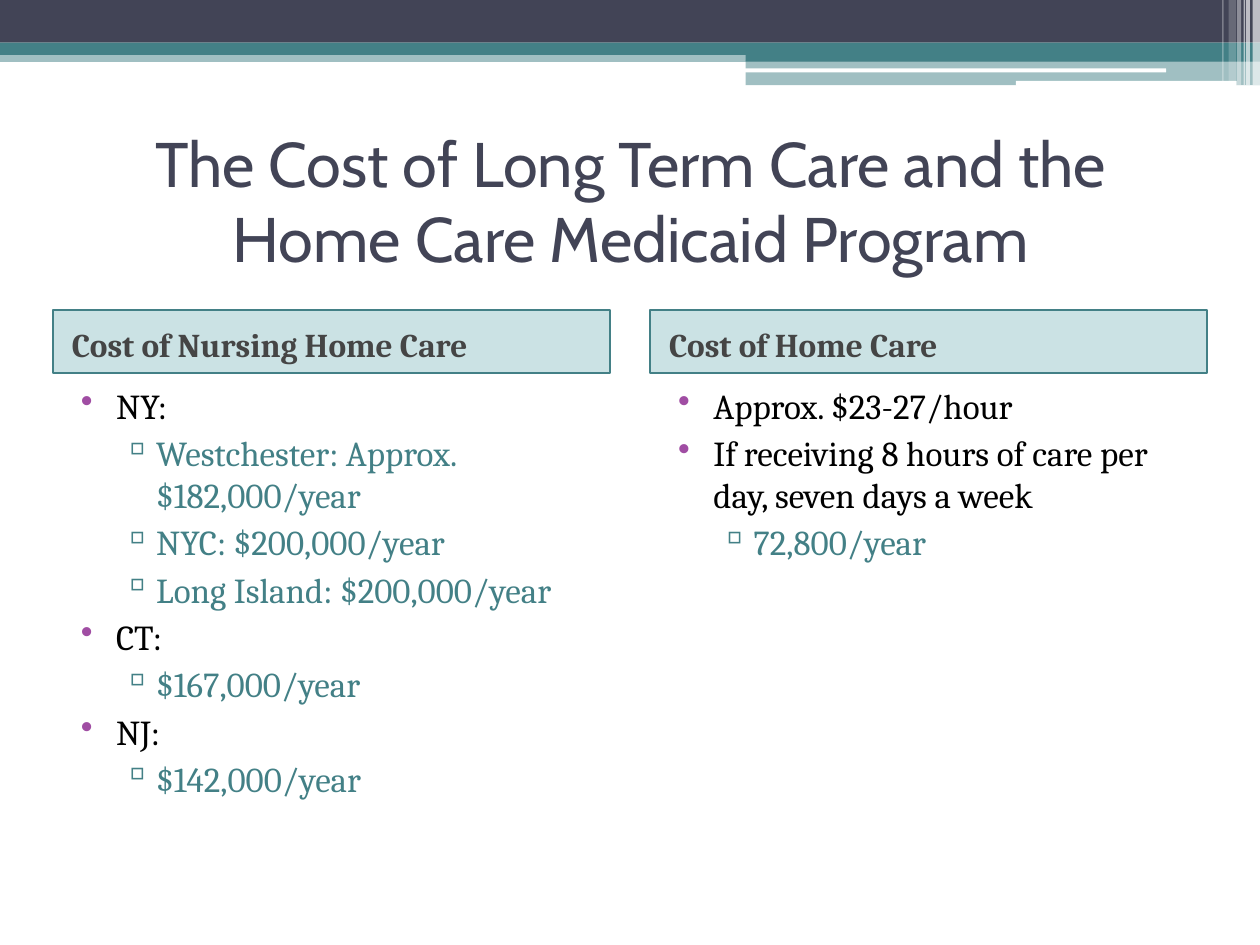
from lxml import etree
from pptx import Presentation
from pptx.dml.color import RGBColor
from pptx.enum.shapes import MSO_SHAPE
from pptx.enum.text import MSO_ANCHOR, PP_ALIGN
from pptx.oxml.ns import qn
from pptx.util import Cm, Pt

RECT, ROUND = MSO_SHAPE.RECTANGLE, MSO_SHAPE.ROUNDED_RECTANGLE
MIDDLE, CENTER = MSO_ANCHOR.MIDDLE, PP_ALIGN.CENTER
TEAL, NAVY, WHITE = "438086", "424456", "FFFFFF"


def paint(target, color, alpha=100):
    """Colour a fill or font; alpha is the opacity in percent."""
    if hasattr(target, "solid"):
        target.solid()
        target = target.fore_color
    else:
        target = target.color
    target.rgb = RGBColor.from_string(color)
    if alpha < 100:
        node = target._xFill.find(qn("a:srgbClr"))
        etree.SubElement(node, qn("a:alpha"), val=str(alpha * 1000))


def add_bar(kind, left, top, width, height, color, alpha=100):
    bar = slide.shapes.add_shape(kind, Cm(left), Cm(top), Cm(width), Cm(height))
    bar.shadow.inherit = False
    paint(bar.fill, color, alpha)
    bar.line.fill.background()
    return bar


deck = Presentation()
deck.slide_width, deck.slide_height = Cm(25.4), Cm(19.05)
slide = deck.slides.add_slide(deck.slide_layouts[6])

# Top bands
for band in (
    (RECT, 0, 1.02, 25.4, 0.23, TEAL, 50),
    (RECT, 0, 0, 25.4, 0.86, NAVY),
    (RECT, 0, 0.86, 25.4, 0.25, TEAL),
    (RECT, 15.03, 0.99, 10.37, 0.25, TEAL),
    (RECT, 15.03, 1.22, 10.37, 0.5, TEAL, 50),
    (ROUND, 15.01, 1.38, 8.5, 0.08, WHITE),
    (ROUND, 20.48, 1.63, 4.45, 0.1, WHITE),
):
    add_bar(*band)

# Pale stripes in the corner
for left, width, height, alpha in (
    (25.25, 0.15, 1.72, 65),
    (25.12, 0.08, 1.72, 65),
    (25.07, 0.03, 1.72, 60),
    (24.94, 0.08, 1.72, 40),
    (24.77, 0.15, 1.63, 20),
    (24.64, 0.03, 1.63, 30),
):
    add_bar(RECT, left, 0, width, height, WHITE, alpha)

title = slide.shapes.add_textbox(Cm(1.07), Cm(2.54), Cm(23.29), Cm(2.97))
frame = title.text_frame
frame.word_wrap = True
frame.vertical_anchor = MIDDLE
para = frame.paragraphs[0]
para.text = "The Cost of Long Term Care and the Home Care Medicaid Program"
para.alignment = CENTER
para.font.name, para.font.size = "Cabin", Pt(36)
paint(para.font, NAVY)

# Bullet levels: left margin, indent, mark, mark colour, text colour
LEVELS = (
    (1.02, -0.71, "•", "A04DA3", "000000"),
    (1.83, -0.69, "▫", TEAL, TEAL),
)
COLUMNS = (
    (1.07, "Cost of Nursing Home Care", (
        (0, "NY:"),
        (1, "Westchester: Approx. $182,000/year"),
        (1, "NYC: $200,000/year"),
        (1, "Long Island: $200,000/year"),
        (0, "CT:"),
        (1, "$167,000/year"),
        (0, "NJ:"),
        (1, "$142,000/year"),
    )),
    (13.11, "Cost of Home Care", (
        (0, "Approx. $23-27/hour"),
        (0, "If receiving 8 hours of care per day, seven days a week"),
        (1, "72,800/year"),
    )),
)

for left, head, items in COLUMNS:
    box = add_bar(RECT, left, 6.25, 11.23, 1.27, "328E97", 25)
    paint(box.line.fill, TEAL)
    box.line.width = Pt(1)
    frame = box.text_frame
    frame.word_wrap = True
    frame.vertical_anchor = MIDDLE
    frame.margin_left, frame.margin_top = Cm(0.38), Cm(0.23)
    para = frame.paragraphs[0]
    para.text = head
    para.alignment = PP_ALIGN.LEFT
    para.font.name, para.font.size, para.font.bold = "Cambria", Pt(19), True
    paint(para.font, "454545")

    body = slide.shapes.add_textbox(Cm(left), Cm(7.52), Cm(11.23), Cm(10.8))
    frame = body.text_frame
    frame.word_wrap = True
    frame.margin_top = Cm(0.23)
    for i, (level, text) in enumerate(items):
        margin, indent, mark, tint, color = LEVELS[level]
        para = frame.add_paragraph() if i else frame.paragraphs[0]
        para.text = text
        para.level = level
        props = para._p.get_or_add_pPr()
        props.set("marL", str(Cm(margin)))
        props.set("indent", str(Cm(indent)))
        node = etree.SubElement(props, qn("a:buClr"))
        etree.SubElement(node, qn("a:srgbClr"), val=tint)
        etree.SubElement(props, qn("a:buChar"), char=mark)
        para.space_before = Pt(3 if i else 0)
        para.font.name, para.font.size = "Cambria", Pt(20)
        paint(para.font, color)

deck.save("out.pptx")
